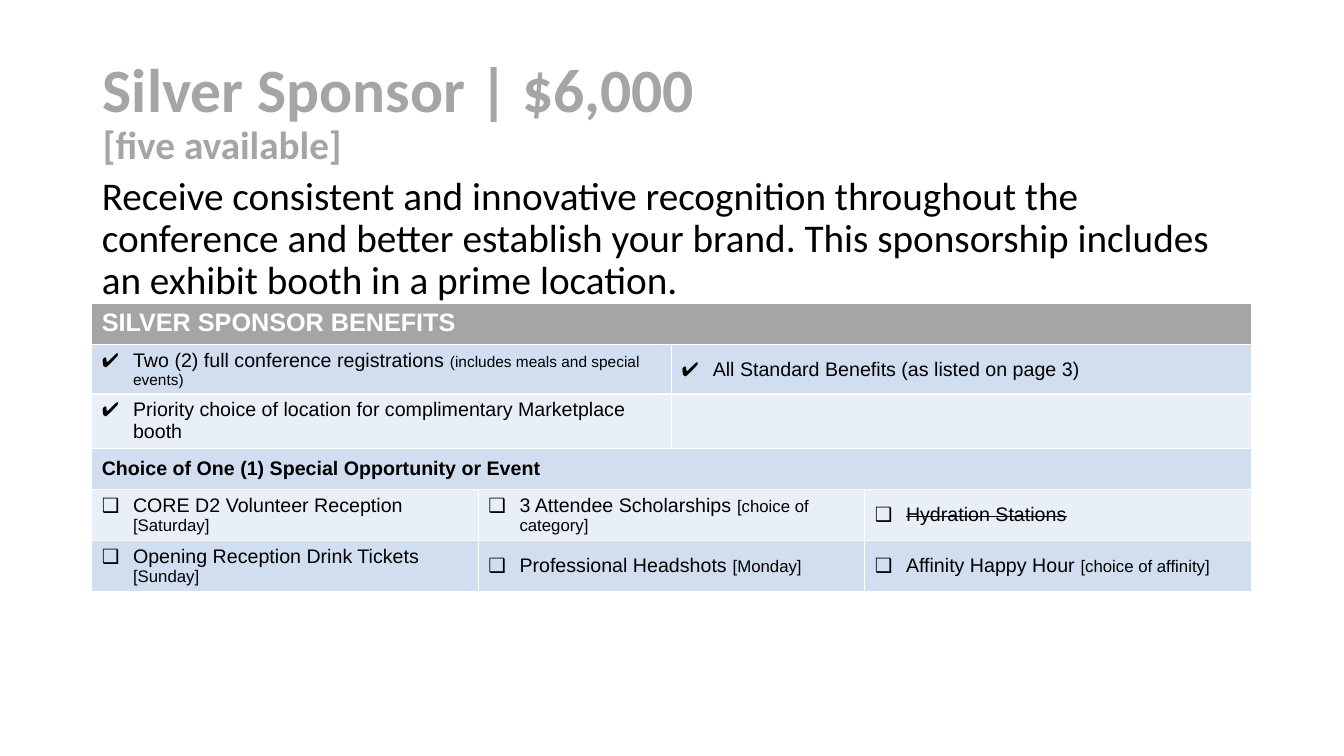
import dataclasses

import pptx
import pptx.dml.color
import pptx.enum.text
import pptx.oxml.ns
import pptx.util
from lxml import etree
from pptx.util import Inches

ALIGN = pptx.enum.text.PP_ALIGN
ANCHOR = pptx.enum.text.MSO_ANCHOR


@dataclasses.dataclass(frozen=True)
class Theme:
    heading_font: str = "Calibri"
    table_font: str = "Arial"
    silver: str = "A5A5A5"
    ink: str = "000000"
    white: str = "FFFFFF"
    bands: tuple = ("D0DEEF", "E9EFF7")
    title: int = 44
    lead: int = 28
    table_header: int = 18
    benefit: int = 14
    detail: int = 12
    fine_print: int = 11


def rgb(value):
    return pptx.dml.color.RGBColor.from_string(value)


def set_bullet(paragraph, mark, color):
    """Give the paragraph a hanging bullet, or none if mark is empty."""
    props = paragraph._p.get_or_add_pPr()
    hang = Inches(0.31) if mark else 0
    props.set("marL", str(hang))
    props.set("indent", str(-hang))
    qn = pptx.oxml.ns.qn
    if not mark:
        etree.SubElement(props, qn("a:buNone"))
        return
    bullet_color = etree.SubElement(props, qn("a:buClr"))
    etree.SubElement(bullet_color, qn("a:srgbClr"), val=color)
    etree.SubElement(props, qn("a:buFont"), typeface="Arial")
    etree.SubElement(props, qn("a:buChar"), char=mark)


def write(frame, parts, *, font, color, bold=False, strike=False, mark="",
          line_spacing=None, line_break=False):
    """Fill a frame with one paragraph of (text, size) parts."""
    paragraph = frame.paragraphs[0]
    set_bullet(paragraph, mark, color)
    paragraph.alignment = ALIGN.LEFT
    if line_spacing:
        paragraph.line_spacing = line_spacing
        paragraph.space_before = pptx.util.Pt(0)
    for index, (text, size) in enumerate(parts):
        if index and line_break:
            paragraph.add_line_break()
        run = paragraph.add_run()
        run.text = text
        run.font.name = font
        run.font.size = pptx.util.Pt(size)
        run.font.bold = bold
        run.font.color.rgb = rgb(color)
        if strike:
            run.font._element.set("strike", "sngStrike")


class SponsorSlide:
    def __init__(self, presentation, theme):
        self.theme = theme
        self.slide = presentation.slides.add_slide(presentation.slide_layouts[1])

    def placeholder(self, index, box, parts, anchor, **style):
        holder = self.slide.placeholders[index]
        holder.left, holder.top, holder.width, holder.height = map(Inches, box)
        frame = holder.text_frame
        frame.auto_size = pptx.enum.text.MSO_AUTO_SIZE.NONE
        frame.word_wrap = True
        frame.vertical_anchor = anchor
        write(frame, parts, font=self.theme.heading_font, line_spacing=0.9, **style)

    def table(self, left, top, column_widths, row_heights):
        grid = self.slide.shapes.add_table(
            len(row_heights), len(column_widths), Inches(left), Inches(top),
            Inches(sum(column_widths)), Inches(sum(row_heights))).table
        for column, width in zip(grid.columns, column_widths):
            column.width = Inches(width)
        for row, height in zip(grid.rows, row_heights):
            row.height = Inches(height)
        return grid

    def table_row(self, grid, row, spans, contents, fill, *, color=None,
                  anchor=ANCHOR.MIDDLE, struck=(), **style):
        """Merge the row's cells by spans and write one list of parts in each."""
        column = 0
        for span, parts in zip(spans, contents):
            cell = grid.cell(row, column)
            if span > 1:
                cell.merge(grid.cell(row, column + span - 1))
            cell.fill.solid()
            cell.fill.fore_color.rgb = rgb(fill)
            cell.vertical_anchor = anchor
            if parts:
                write(cell.text_frame, parts, font=self.theme.table_font,
                      color=color or self.theme.ink,
                      strike=parts[0][0] in struck, **style)
            column += span


def main():
    theme = Theme()
    presentation = pptx.Presentation()
    presentation.slide_width = Inches(13.33)
    presentation.slide_height = Inches(7.5)
    sponsor = SponsorSlide(presentation, theme)

    sponsor.placeholder(
        0, (0.92, 0.4, 11.5, 1.45),
        [("Silver Sponsor | $6,000", theme.title), ("[five available]", theme.lead)],
        ANCHOR.MIDDLE, color=theme.silver, bold=True, line_break=True)
    sponsor.placeholder(
        1, (0.91, 1.7, 11.5, 4.76),
        [("Receive consistent and innovative recognition throughout the conference "
          "and better establish your brand. This sponsorship includes an exhibit "
          "booth in a prime location.", theme.lead)],
        ANCHOR.TOP, color=theme.ink)

    third, sixth = 11.5 / 3, 11.5 / 6
    tall, short = 0.41, 0.27
    benefits = sponsor.table(0.91, 3.01, (third, sixth, sixth, third),
                             (tall, short, short, tall, tall, tall))
    full, halves, thirds = (4,), (2, 2), (1, 2, 1)

    sponsor.table_row(benefits, 0, full,
                      [[("SILVER SPONSOR BENEFITS", theme.table_header)]],
                      theme.silver, color=theme.white, anchor=ANCHOR.TOP, bold=True)

    included = [
        [[("Two (2) full conference registrations ", theme.benefit),
          ("(includes meals and special events)", theme.fine_print)],
         [("All Standard Benefits (as listed on page 3)", theme.benefit)]],
        [[("Priority choice of location for complimentary Marketplace booth",
           theme.benefit)],
         []],
    ]
    choice_heading = [[("Choice of One (1) Special Opportunity or Event", theme.benefit)]]
    opportunities = [
        [("CORE D2 Volunteer Reception ", "[Saturday]"),
         ("3 Attendee Scholarships ", "[choice of category]"),
         ("Hydration Stations",)],
        [("Opening Reception Drink Tickets ", "[Sunday]"),
         ("Professional Headshots ", "[Monday]"),
         ("Affinity Happy Hour ", "[choice of affinity]")],
    ]
    choices = [[list(zip(texts, (theme.benefit, theme.detail))) for texts in row]
               for row in opportunities]

    body_rows = [(halves, row, {"mark": "✔"}) for row in included]
    body_rows.append((full, choice_heading, {"bold": True}))
    body_rows += [(thirds, row, {"mark": "❑", "struck": ("Hydration Stations",)})
                  for row in choices]
    for number, (spans, contents, style) in enumerate(body_rows):
        sponsor.table_row(benefits, number + 1, spans, contents,
                          theme.bands[number % 2], **style)

    presentation.save("out.pptx")


if __name__ == "__main__":
    main()
